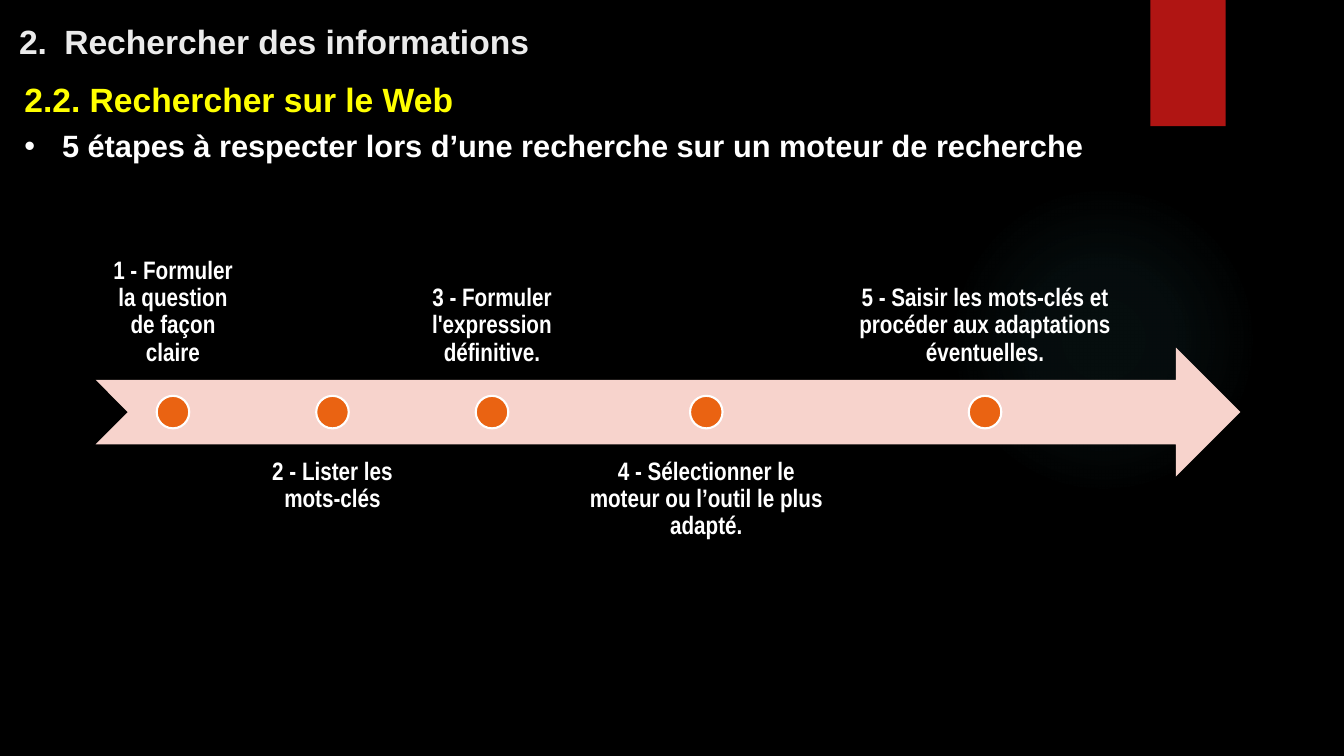
import pptx
import pptx.dml.color
import pptx.enum.shapes
import pptx.enum.text
import pptx.oxml
import pptx.oxml.ns
import pptx.util

Cm = pptx.util.Cm
Pt = pptx.util.Pt
SHAPE = pptx.enum.shapes.MSO_SHAPE
ANCHOR = pptx.enum.text.MSO_ANCHOR
ALIGN = pptx.enum.text.PP_ALIGN

COLOURS = {
    "background": "000000",
    "ribbon": "B01513",
    "glow": "50B9C1",
    "title": "EBEBEB",
    "subtitle": "FFFF00",
    "text": "FFFFFF",
    "arrow": "F7D3CC",
    "dot": "EA6312",
}
GLOW_STOPS = [(0, 7), (36, 6), (69, 0)]
STEPS = [
    ("1 - Formuler la question de façon claire", 3.84),
    ("2 - Lister les mots-clés", 3.84),
    ("3 - Formuler l'expression définitive.", 3.84),
    ("4 - Sélectionner le moteur ou l’outil le plus adapté.", 6.6),
    ("5 - Saisir les mots-clés et procéder aux adaptations éventuelles.", 7.09),
]
FIRST_LEFT, STEP_GAP = 2.44, 0.18
ABOVE_TOP, BELOW_TOP, LABEL_HEIGHT = 6.35, 11.2, 3.25
ARROW_TOP, ARROW_HEIGHT, DOT_SIZE = 8.76, 3.25, 0.82


def colour(name):
    """Return the named colour."""
    return pptx.dml.color.RGBColor.from_string(COLOURS[name])


def apply_format(target, values):
    """Set each attribute of the target from a dict."""
    for name, value in values.items():
        setattr(target, name, value)


def place(box, left, top, width, height):
    """Move and size a box in centimetres."""
    apply_format(box, {"left": Cm(left), "top": Cm(top),
                       "width": Cm(width), "height": Cm(height)})


def set_frame(box, anchor, **margins):
    """Prepare the text frame of a box."""
    frame = box.text_frame
    apply_format(frame, {"word_wrap": True, "vertical_anchor": anchor,
                         "auto_size": pptx.enum.text.MSO_AUTO_SIZE.NONE, **margins})
    return frame


def write(para, text, size, colour_name, font="Arial", **layout):
    """Write one bold paragraph."""
    span = para.add_run()
    span.text = text
    apply_format(span.font, {"size": Pt(size), "name": font, "bold": True})
    span.font.color.rgb = colour(colour_name)
    apply_format(para, layout)


def set_bullet(para, indent, character=None):
    """Give a paragraph a hanging indent and an optional bullet."""
    properties = para._p.get_or_add_pPr()
    properties.set("marL", str(Cm(indent)))
    properties.set("indent", str(-Cm(indent)))
    tag = "buChar" if character else "buNone"
    bullet = pptx.oxml.ns.qn("a:" + tag)
    element = properties.makeelement(bullet, {"char": character} if character else {})
    properties.append(element)


def add_shape(page, kind, left, top, width, height, fill, line=None):
    """Add a flat preset shape."""
    shape = page.shapes.add_shape(kind, Cm(left), Cm(top), Cm(width), Cm(height))
    shape.shadow.inherit = False
    shape.fill.solid()
    shape.fill.fore_color.rgb = colour(fill)
    if line:
        shape.line.color.rgb = colour(line)
        shape.line.width = Pt(1.5)
    else:
        shape.line.fill.background()
    return shape


def add_glow(page):
    """Add the faint radial glow."""
    glow = add_shape(page, SHAPE.OVAL, 23.9, 4.65, 7.82, 7.82, "glow")
    stops = "".join(
        f'<a:gs pos="{position * 1000}"><a:srgbClr val="{COLOURS["glow"]}">'
        f'<a:alpha val="{alpha * 1000}"/></a:srgbClr></a:gs>'
        for position, alpha in GLOW_STOPS)
    gradient = pptx.oxml.parse_xml(
        f'<a:gradFill {pptx.oxml.ns.nsdecls("a")} rotWithShape="1"><a:gsLst>{stops}</a:gsLst>'
        '<a:path path="circle"><a:fillToRect l="50000" t="50000" r="50000" b="50000"/>'
        '</a:path></a:gradFill>')
    properties = glow._element.spPr
    solid = properties.find(pptx.oxml.ns.qn("a:solidFill"))
    properties.replace(solid, gradient)


def add_headings(page):
    """Fill the title and body placeholders."""
    title, body = page.shapes.title, page.placeholders[1]
    place(title, 0, 0.41, 25.1, 1.27)
    para = set_frame(title, ANCHOR.BOTTOM, margin_left=Cm(0.48)).paragraphs[0]
    set_bullet(para, 1.14)
    write(para, "2.\tRechercher des informations", 24, "title", alignment=ALIGN.LEFT)

    place(body, 0.36, 1.85, 28.17, 2.44)
    frame = set_frame(body, ANCHOR.TOP)
    subtitle, sentence = frame.paragraphs[0], frame.add_paragraph()
    set_bullet(subtitle, 0)
    write(subtitle, "2.2. Rechercher sur le Web", 24, "subtitle",
          space_before=Pt(0), space_after=Pt(6))
    set_bullet(sentence, 0.95, "•")
    write(sentence, "5 étapes à respecter lors d’une recherche sur un moteur de recherche",
          22, "text", space_before=Pt(0))


def add_step(page, text, left, width, above):
    """Add the label and the dot of one step."""
    label = page.shapes.add_textbox(Cm(left), Cm(ABOVE_TOP if above else BELOW_TOP),
                                    Cm(width), Cm(LABEL_HEIGHT))
    margins = {f"margin_{side}": Cm(0.36) for side in ("left", "top", "right", "bottom")}
    frame = set_frame(label, ANCHOR.BOTTOM if above else ANCHOR.TOP, **margins)
    write(frame.paragraphs[0], text, 18, "text", "Arial Narrow",
          alignment=ALIGN.CENTER, line_spacing=0.9)
    add_shape(page, SHAPE.OVAL, left + (width - DOT_SIZE) / 2,
              ARROW_TOP + (ARROW_HEIGHT - DOT_SIZE) / 2,
              DOT_SIZE, DOT_SIZE, "dot", "text")


def add_timeline(page):
    """Add the arrow with its steps, alternately above and below."""
    add_shape(page, SHAPE.NOTCHED_RIGHT_ARROW, 2.41, ARROW_TOP, 28.85, ARROW_HEIGHT, "arrow")
    left = FIRST_LEFT
    for index, (text, width) in enumerate(STEPS):
        add_step(page, text, left, width, index % 2 == 0)
        left += width + STEP_GAP


def main():
    """Build and save the slide."""
    deck = pptx.Presentation()
    apply_format(deck, {"slide_width": Cm(33.87), "slide_height": Cm(19.05)})
    page = deck.slides.add_slide(deck.slide_layouts[1])
    page.background.fill.solid()
    page.background.fill.fore_color.rgb = colour("background")
    add_glow(page)
    add_shape(page, SHAPE.RECTANGLE, 28.99, 0, 1.9, 3.18, "ribbon")
    add_headings(page)
    add_timeline(page)
    deck.save("out.pptx")


if __name__ == "__main__":
    main()
